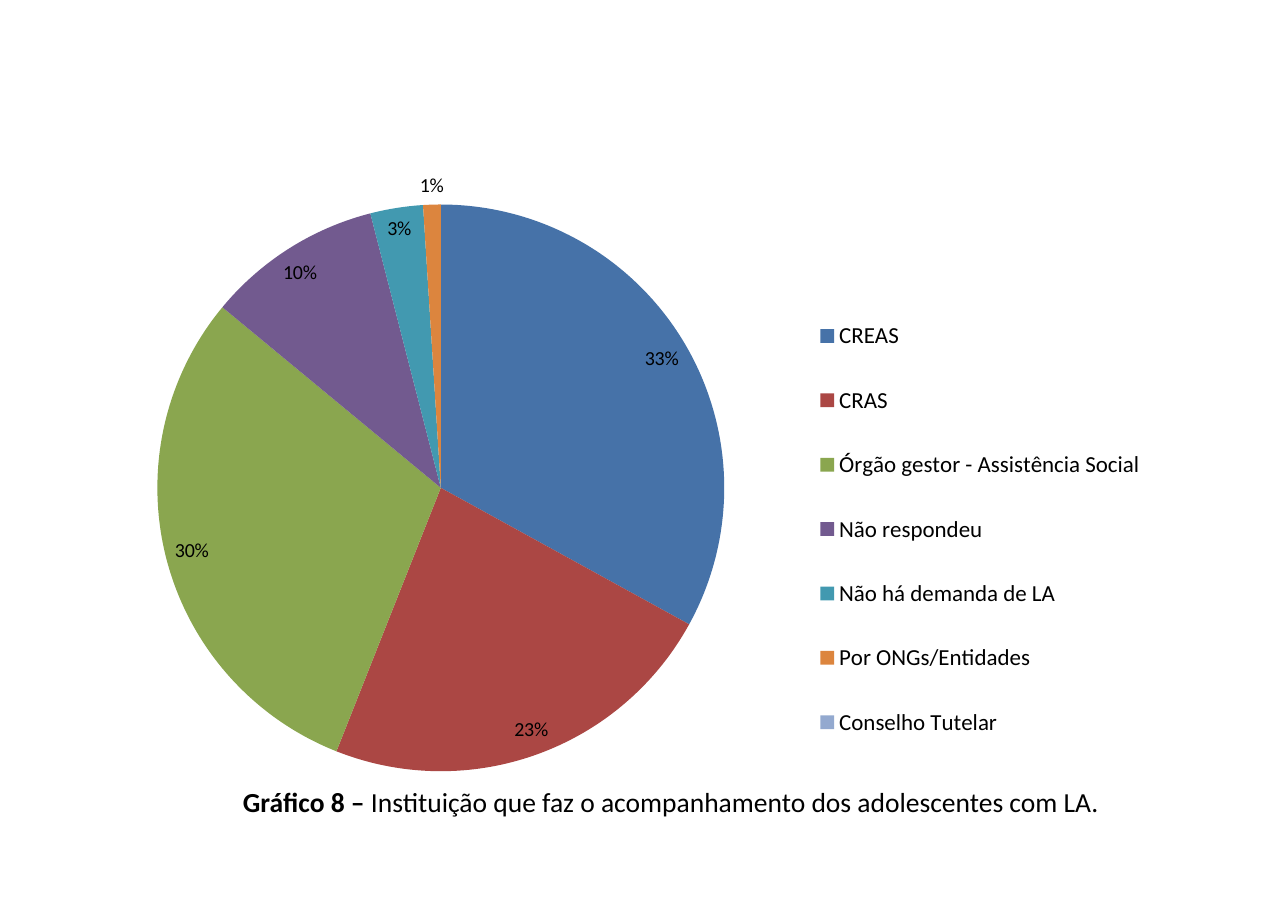
from lxml.etree import SubElement
from pptx import Presentation
from pptx.chart.data import CategoryChartData
from pptx.dml.color import RGBColor
from pptx.enum.chart import XL_CHART_TYPE, XL_LABEL_POSITION, XL_LEGEND_POSITION
from pptx.enum.text import PP_ALIGN
from pptx.oxml.ns import qn
from pptx.util import Inches, Pt


def style_font(font, size, color="000000", bold=False):
    font.name = "Calibri"
    font.size = Pt(size)
    font.bold = bold
    font.color.rgb = RGBColor.from_string(color)


def place_in_chart(element, index, **fractions):
    """Fix a chart part at x, y, w, h, given as fractions of the chart's size."""
    for old_layout in element.findall(qn("c:layout")):
        element.remove(old_layout)
    layout = SubElement(element, qn("c:layout"))
    element.insert(index, layout)
    manual = SubElement(layout, qn("c:manualLayout"))
    if element.tag == qn("c:plotArea"):
        SubElement(manual, qn("c:layoutTarget")).set("val", "inner")
    for axis in ("x", "y"):
        SubElement(manual, qn(f"c:{axis}Mode")).set("val", "edge")
    for name, fraction in fractions.items():
        SubElement(manual, qn(f"c:{name}")).set("val", str(fraction))


deck = Presentation()
deck.slide_width, deck.slide_height = Inches(11.69), Inches(8.28)
page = deck.slides.add_slide(deck.slide_layouts[6])

# Caption
box = page.shapes.add_textbox(Inches(0.17), Inches(7.07), Inches(11.84), Inches(0.42))
frame = box.text_frame
frame.word_wrap = True
frame.margin_left = frame.margin_right = Inches(0.11)
frame.margin_top = frame.margin_bottom = Inches(0.06)
para = frame.paragraphs[0]
para.alignment = PP_ALIGN.CENTER
for text, bold in (
    ("Gráfico 8 – ", True),
    ("Instituição que faz o acompanhamento dos adolescentes com LA.", False),
):
    span = para.add_run()
    span.text = text
    style_font(span.font, 18, bold=bold)

# Pie chart: institution, percentage, slice colour
institutions = [
    ("CREAS", 33, "4672A8"),
    ("CRAS", 23, "AB4744"),
    ("Órgão gestor - Assistência Social", 30, "8AA64F"),
    ("Não respondeu", 10, "725A8F"),
    ("Não há demanda de LA", 3, "4299B0"),
    ("Por ONGs/Entidades", 1, "DC853E"),
    ("Conselho Tutelar", 0, "93A9CF"),
]
data = CategoryChartData()
data.categories = [name for name, share, color in institutions]
data.add_series("Series 1", [share for name, share, color in institutions])
chart = page.shapes.add_chart(
    XL_CHART_TYPE.PIE, Inches(0.52), Inches(1.44), Inches(10.09), Inches(5.75), data
).chart
chart.has_title = False
style_font(chart.font, 10)

plot = chart.plots[0]
plot.vary_by_categories = True
for index, (name, share, color) in enumerate(institutions):
    fill = plot.series[0].points[index].format.fill
    fill.solid()
    fill.fore_color.rgb = RGBColor.from_string(color)

plot.has_data_labels = True
labels = plot.data_labels
labels.show_value = False
labels.show_percentage = True
labels.number_format = "0%"
labels.number_format_is_linked = False
labels.position = XL_LABEL_POSITION.BEST_FIT
style_font(labels.font, 13)

chart.has_legend = True
legend = chart.legend
legend.position = XL_LEGEND_POSITION.RIGHT
legend.include_in_layout = False
style_font(legend.font, 15)

plot_area = chart.element.find(".//" + qn("c:plotArea"))
place_in_chart(plot_area, 0, x=0.09, y=0.07, w=0.51, h=0.9)
legend_element = chart.element.find(".//" + qn("c:legend"))
place_in_chart(legend_element, 1, x=0.67, y=0.2, w=0.32, h=0.77)

deck.save("out.pptx")
